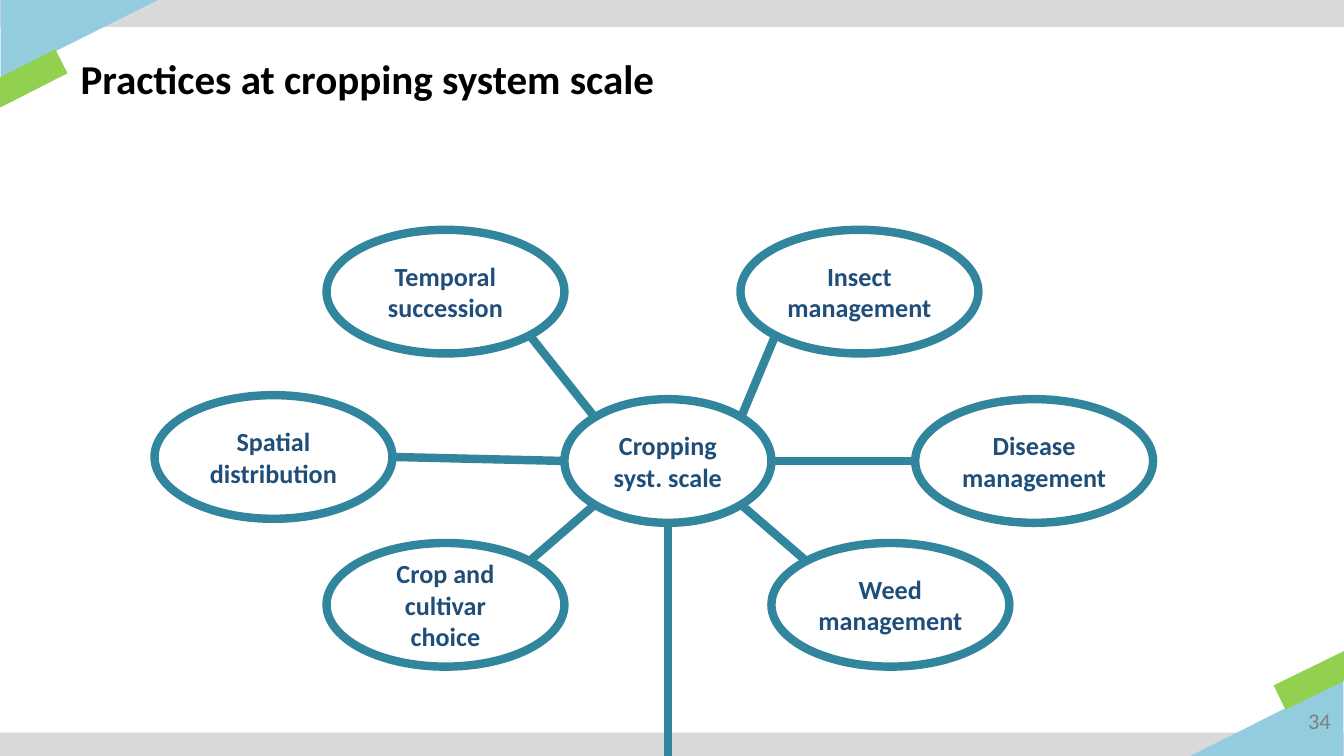
from math import sqrt

from lxml import etree
from pptx import Presentation
from pptx.dml.color import RGBColor
from pptx.enum.shapes import MSO_CONNECTOR, MSO_SHAPE
from pptx.enum.text import MSO_ANCHOR, PP_ALIGN
from pptx.oxml.ns import qn
from pptx.util import Inches, Pt

WHITE = RGBColor(0xFF, 0xFF, 0xFF)
BLACK = RGBColor(0x00, 0x00, 0x00)
GRAY = RGBColor(0x80, 0x80, 0x80)
BAND_GRAY = RGBColor(0xD9, 0xD9, 0xD9)
SKY = RGBColor(0x93, 0xCD, 0xDD)
GREEN = RGBColor(0x92, 0xD0, 0x50)
TEAL = RGBColor(0x31, 0x85, 0x9C)
NAVY = RGBColor(0x1F, 0x4E, 0x79)

OUTLINE = Pt(4.5)
BUBBLE_HEIGHT = 0.92
PRACTICE_WIDTH = 1.77
DIAGONAL = 1 / sqrt(2)

HUB = (4.2, 2.97, 1.54, BUBBLE_HEIGHT)

# Text, left, top, direction from the hub, direction from the practice
PRACTICES = [
    ("Spatial distribution", 1.15, 2.94, (-1, 0), (1, 0)),
    ("Weed management", 5.74, 4.04, (1, 1), (-1, -1)),
    ("Crop and cultivar choice", 2.43, 4.04, (-1, 1), (1, -1)),
    ("Temporal succession", 2.43, 1.71, (-1, -1), (1, 1)),
    ("Disease management", 6.81, 2.97, (1, 0), (-1, 0)),
    ("Insect\nmanagement", 5.51, 1.71, (1, -1), (-1, 1)),
]


def write_text(shape, text, *, size, color, bold=False, align=PP_ALIGN.LEFT,
               inset=(0.1, 0.05)):
    frame = shape.text_frame
    frame.word_wrap = True
    frame.vertical_anchor = MSO_ANCHOR.MIDDLE
    frame.margin_left = frame.margin_right = Inches(inset[0])
    frame.margin_top = frame.margin_bottom = Inches(inset[1])
    frame.text = text
    for paragraph in frame.paragraphs:
        paragraph.alignment = align
        font = paragraph.runs[0].font
        font.name = "Calibri"
        font.size = Pt(size)
        font.bold = bold
        font.color.rgb = color


def add_filled(slide, preset, box, color, rotation=0):
    shape = slide.shapes.add_shape(preset, *map(Inches, box))
    shape.shadow.inherit = False
    shape.fill.solid()
    shape.fill.fore_color.rgb = color
    shape.line.fill.background()
    shape.rotation = rotation
    return shape


def add_corner(slide, band_top, band_turn, triangle_box, triangle_turn,
               bar_box, bar_turn):
    """A gray band with a triangle and a green bar at one end."""
    add_filled(slide, MSO_SHAPE.RECTANGLE, (0, band_top, 10, 0.2), BAND_GRAY,
               band_turn)
    triangle = add_filled(slide, MSO_SHAPE.ISOSCELES_TRIANGLE, triangle_box,
                          SKY, triangle_turn)
    triangle.adjustments[0] = 0
    add_filled(slide, MSO_SHAPE.RECTANGLE, bar_box, GREEN, bar_turn)


def add_bubble(slide, text, box):
    bubble = add_filled(slide, MSO_SHAPE.OVAL, box, WHITE)
    bubble.line.color.rgb = TEAL
    bubble.line.width = OUTLINE
    write_text(bubble, text, size=14, color=NAVY, bold=True,
               align=PP_ALIGN.CENTER, inset=(0.07, 0.04))


def edge_point(box, direction):
    """The point on an ellipse's edge in one of eight directions."""
    left, top, width, height = box
    dx, dy = direction
    reach = DIAGONAL if dx and dy else 1
    return (left + width / 2 * (1 + dx * reach),
            top + height / 2 * (1 + dy * reach))


def add_link(slide, start, end):
    link = slide.shapes.add_connector(MSO_CONNECTOR.STRAIGHT,
                                      *map(Inches, (*start, *end)))
    link.line.color.rgb = TEAL
    link.line.width = OUTLINE
    etree.SubElement(link._element.spPr, qn("a:effectLst"))


def add_title(slide, text):
    title = slide.shapes.title
    title.left, title.top = Inches(0.5), Inches(0.23)
    title.width, title.height = Inches(9.36), Inches(0.7)
    write_text(title, text, size=22, color=BLACK, bold=True)


def main():
    deck = Presentation()
    # Widescreen, 16:9
    deck.slide_width = Inches(10)
    deck.slide_height = deck.slide_width * 9 // 16
    slide = deck.slides.add_slide(deck.slide_layouts[5])

    # Top and bottom decoration
    add_corner(slide, 0, 0, (0.3, -0.3, 0.59, 1.18), 90,
               (-0.1, 0.49, 0.59, 0.2), 333)
    add_corner(slide, 5.45, 180, (9.11, 4.76, 0.59, 1.18), 270,
               (9.49, 4.96, 0.59, 0.2), 154)

    # Title and page number
    add_title(slide, "Practices at cropping system scale")
    page_number = slide.shapes.add_textbox(*map(Inches, (9.39, 5.21, 0.61, 0.3)))
    write_text(page_number, "34", size=12, color=GRAY, align=PP_ALIGN.RIGHT)

    # Hub, with a stem that runs off the bottom
    add_bubble(slide, "Cropping syst. scale", HUB)
    stem_top = edge_point(HUB, (0, 1))
    add_link(slide, stem_top, (stem_top[0], 5.88))

    # Practices around the hub
    for text, left, top, from_hub, from_practice in PRACTICES:
        box = (left, top, PRACTICE_WIDTH, BUBBLE_HEIGHT)
        add_bubble(slide, text, box)
        add_link(slide, edge_point(HUB, from_hub), edge_point(box, from_practice))

    deck.save("out.pptx")


if __name__ == "__main__":
    main()
